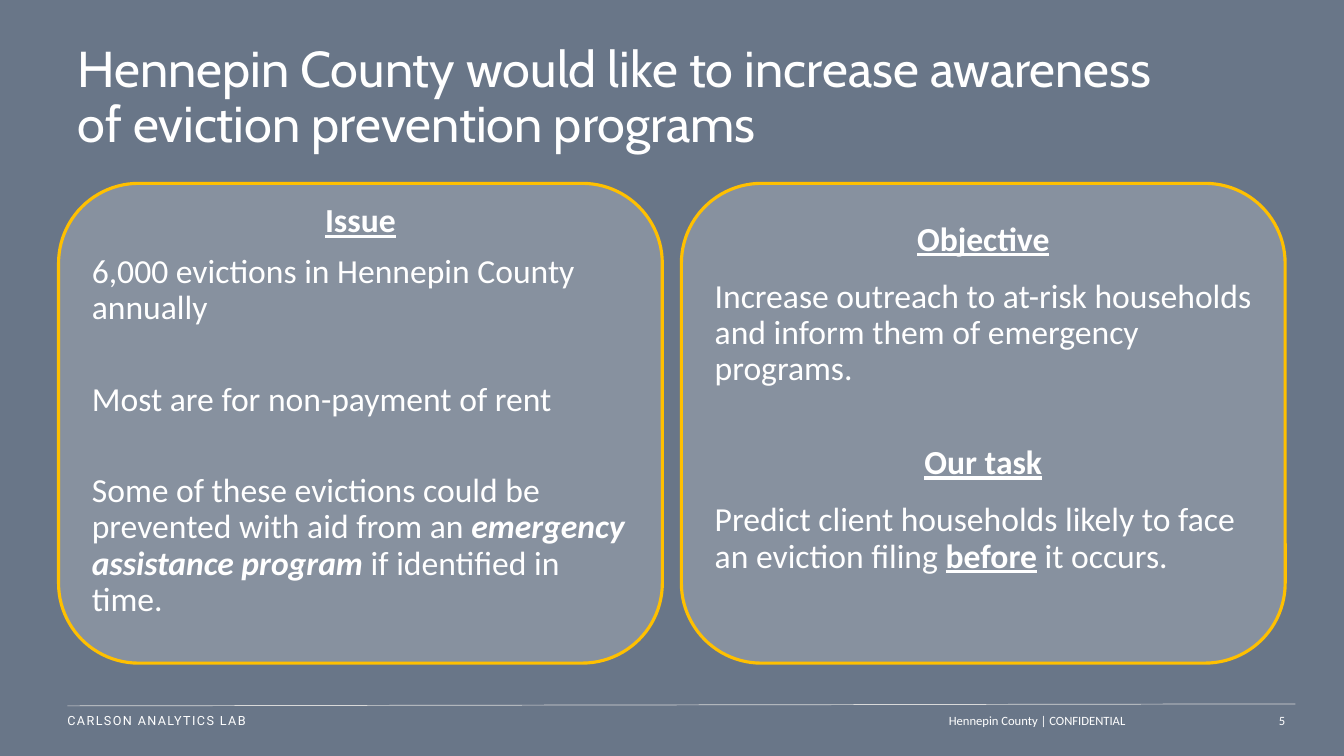
from lxml.etree import SubElement
from pptx import Presentation
from pptx.dml.color import RGBColor
from pptx.enum.shapes import MSO_CONNECTOR, MSO_SHAPE
from pptx.enum.text import MSO_ANCHOR, PP_ALIGN
from pptx.oxml.ns import qn
from pptx.util import Pt

WHITE, SLATE, GOLD, GREY = "FFFFFF", "697688", "FFC000", "D9D9D9"
PANEL_TOP, PANEL_WIDTH, PANEL_HEIGHT = 131, 431.3, 342.7

# Each paragraph: space before, alignment, runs of (text, styles: b, i, u)
ISSUE = [
    (0, PP_ALIGN.CENTER, [("Issue", "bu")]),
    (10, PP_ALIGN.LEFT, [("6,000 evictions in Hennepin County annually", "")]),
    (39.5, PP_ALIGN.LEFT, [("Most are for non-payment of rent", "")]),
    (39.5, PP_ALIGN.LEFT, [
        ("Some of these evictions could be prevented with aid from an ", ""),
        ("emergency assistance program", "bi"),
        (" if identified in time.", "")]),
]
OBJECTIVE = [
    (0, PP_ALIGN.CENTER, [("Objective", "bu")]),
    (15, PP_ALIGN.LEFT, [("Increase outreach to at-risk households and inform them "
                          "of emergency programs.", "")]),
    (41, PP_ALIGN.CENTER, [("Our task", "bu")]),
    (15, PP_ALIGN.LEFT, [
        ("Predict client households likely to face an eviction filing ", ""),
        ("before", "bu"),
        (" it occurs.", "")]),
]


def color(value):
    return RGBColor.from_string(value)


def set_font(paragraph, name, size):
    paragraph.font.name = name
    paragraph.font.size = Pt(size)
    paragraph.font.color.rgb = color(WHITE)


def add_title(slide, left, top, width, height, text):
    title = slide.shapes.title
    title.left, title.top = Pt(left), Pt(top)
    title.width, title.height = Pt(width), Pt(height)
    title.text_frame.text = text
    title.text_frame.vertical_anchor = MSO_ANCHOR.MIDDLE
    paragraph = title.text_frame.paragraphs[0]
    paragraph.alignment = PP_ALIGN.LEFT
    paragraph.line_spacing = 0.9
    set_font(paragraph, "Cabin", 36)


def add_panel(slide, left, top, width, height, paragraphs, bottom_inset):
    """Draw a translucent rounded panel; the bottom inset lifts its centred text."""
    panel = slide.shapes.add_shape(MSO_SHAPE.ROUNDED_RECTANGLE,
                                   Pt(left), Pt(top), Pt(width), Pt(height))
    panel.shadow.inherit = False
    panel.fill.solid()
    panel.fill.fore_color.rgb = color(WHITE)
    fill_color = panel._element.spPr.find(qn("a:solidFill"))[0]
    SubElement(fill_color, qn("a:alpha"), val="20000")
    panel.line.color.rgb = color(GOLD)
    panel.line.width = Pt(2.25)

    frame = panel.text_frame
    frame.word_wrap = True
    frame.vertical_anchor = MSO_ANCHOR.MIDDLE
    frame.margin_top, frame.margin_bottom = Pt(0), Pt(bottom_inset)
    for index, (space_before, alignment, runs) in enumerate(paragraphs):
        paragraph = frame.add_paragraph() if index else frame.paragraphs[0]
        paragraph.alignment = alignment
        paragraph.line_spacing = 0.9
        paragraph.space_before = Pt(space_before)
        set_font(paragraph, "Calibri", 24)
        for text, styles in runs:
            run = paragraph.add_run()
            run.text = text
            run.font.bold = "b" in styles
            run.font.italic = "i" in styles
            run.font.underline = "u" in styles


def add_footer_text(slide, left, top, width, height, text, font, alignment):
    box = slide.shapes.add_textbox(Pt(left), Pt(top), Pt(width), Pt(height))
    frame = box.text_frame
    frame.word_wrap = True
    frame.vertical_anchor = MSO_ANCHOR.MIDDLE
    frame.margin_left = Pt(0)
    frame.text = text
    paragraph = frame.paragraphs[0]
    paragraph.alignment = alignment
    set_font(paragraph, font, 9)
    return paragraph


def add_footer(slide, left, top, width, height):
    rule = slide.shapes.add_connector(MSO_CONNECTOR.STRAIGHT, Pt(left), Pt(top + 1.4),
                                      Pt(left + width), Pt(top))
    rule.line.color.rgb = color(GREY)
    rule.line.width = Pt(0.5)
    SubElement(rule._element.spPr, qn("a:effectLst"))

    lab = add_footer_text(slide, left, top, 233, height, "CARLSON ANALYTICS LAB",
                          "Roboto", PP_ALIGN.LEFT)
    lab.runs[0]._r.get_or_add_rPr().set("spc", "100")
    add_footer_text(slide, left + 335, top, 427.7, height,
                    "Hennepin County | CONFIDENTIAL", "Calibri", PP_ALIGN.RIGHT)
    add_footer_text(slide, left + width - 32.4, top, 32.4, height, "5",
                    "Calibri", PP_ALIGN.RIGHT)


def main():
    presentation = Presentation()
    presentation.slide_width, presentation.slide_height = Pt(960), Pt(540)
    slide = presentation.slides.add_slide(presentation.slide_layouts[5])
    slide.background.fill.solid()
    slide.background.fill.fore_color.rgb = color(SLATE)

    add_title(slide, 48.2, 31, 806.4, 79.2,
              "Hennepin County would like to increase awareness "
              "of eviction prevention programs")
    panels = [(ISSUE, 17), (OBJECTIVE, 35)]
    for index, (paragraphs, bottom_inset) in enumerate(panels):
        add_panel(slide, 41.8 + index * (PANEL_WIDTH + 13.6), PANEL_TOP,
                  PANEL_WIDTH, PANEL_HEIGHT, paragraphs, bottom_inset)
    add_footer(slide, 48.2, 502.8, 877, 23.4)
    presentation.save("out.pptx")


if __name__ == "__main__":
    main()
